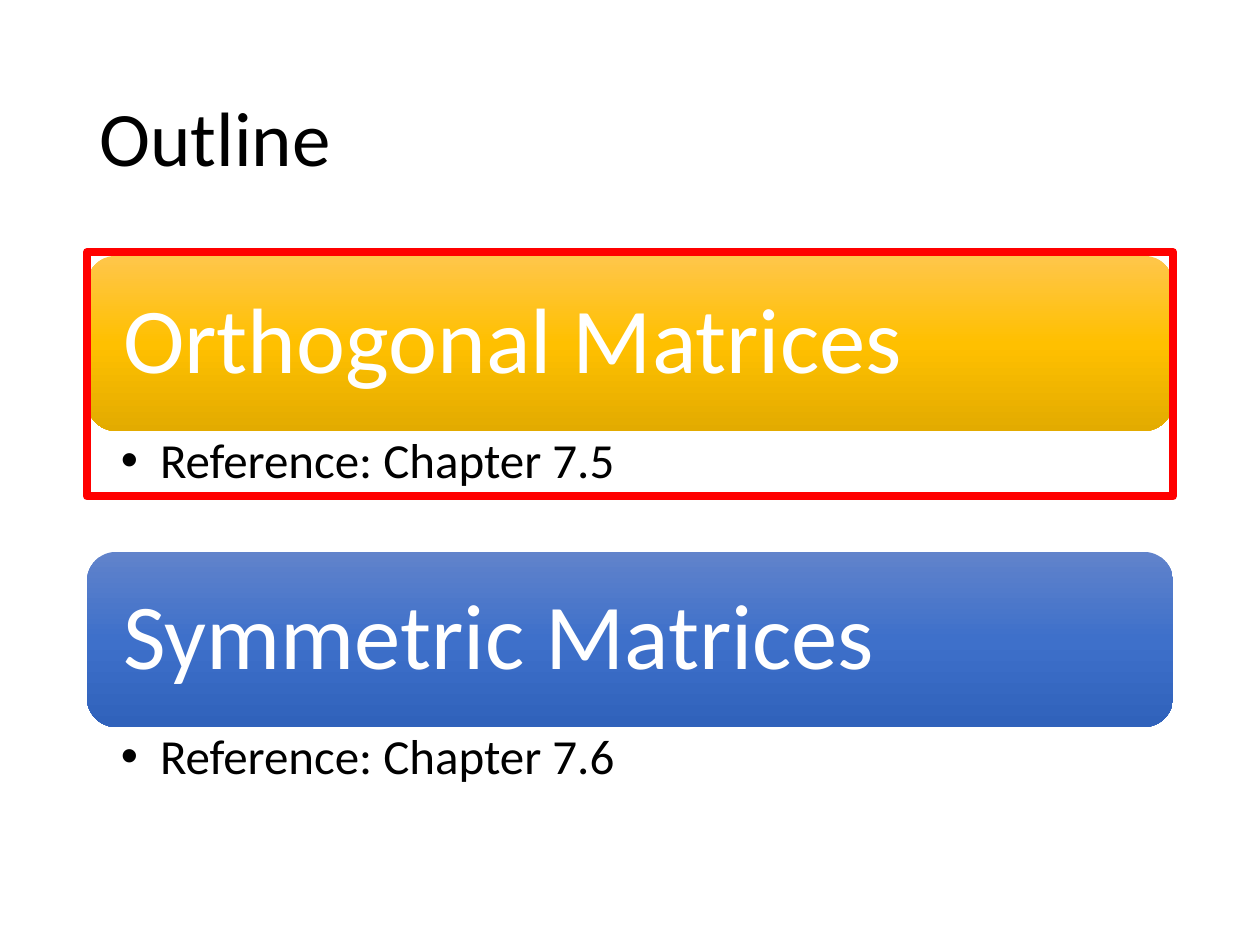
from copy import deepcopy

from lxml import etree
from pptx import Presentation
from pptx.dml.color import RGBColor
from pptx.enum.shapes import MSO_SHAPE
from pptx.enum.text import MSO_ANCHOR, PP_ALIGN
from pptx.oxml.ns import qn
from pptx.util import Inches, Pt

ROUND, RECT = MSO_SHAPE.ROUNDED_RECTANGLE, MSO_SHAPE.RECTANGLE
MIDDLE, TOP = MSO_ANCHOR.MIDDLE, MSO_ANCHOR.TOP
LEFT = PP_ALIGN.LEFT

EDGE, WIDTH = 0.69, 8.62
START, BAR, NOTE = 2.03, 1.39, 0.96
TOPICS = [
    ("Orthogonal Matrices", "Reference: Chapter 7.5", ("FFC64B", "FFC000", "E3AB00")),
    ("Symmetric Matrices", "Reference: Chapter 7.6", ("6183CB", "3E70CA", "3062BB")),
]


def color(code):
    return RGBColor.from_string(code)


def box(top, height):
    """Return the bounds of a full-width band."""
    return [Inches(n) for n in (EDGE, top, WIDTH, height)]


def write(frame, text, size, code, anchor, insets=(0.1, 0.05, 0.1, 0.05)):
    frame.word_wrap = True
    frame.vertical_anchor = anchor
    (frame.margin_left, frame.margin_top,
     frame.margin_right, frame.margin_bottom) = [Inches(n) for n in insets]
    line = frame.paragraphs[0]
    line.text = text
    line.alignment = LEFT
    line.line_spacing = 0.9
    line.font.size = Pt(size)
    line.font.name = "Calibri"
    line.font.color.rgb = color(code)
    return line


def shade(shape, codes):
    """Fill a shape with an even gradient from top to bottom."""
    fill = shape.fill
    fill.gradient()
    fill.gradient_angle = 270
    stops = shape._element.spPr.find(".//" + qn("a:gsLst"))
    while len(stops) < len(codes):
        stops.append(deepcopy(stops[-1]))
    for i, (stop, code) in enumerate(zip(fill.gradient_stops, codes)):
        stop.position = i / (len(codes) - 1)
        stop.color.rgb = color(code)


def bullet(line, indent):
    props = line._p.get_or_add_pPr()
    props.set("marL", str(Inches(indent)))
    props.set("indent", str(-Inches(indent)))
    etree.SubElement(props, qn("a:buFont")).set("typeface", "Arial")
    etree.SubElement(props, qn("a:buChar")).set("char", "•")


def add_bar(slide, top, text, codes):
    bar = slide.shapes.add_shape(ROUND, *box(top, BAR))
    bar.shadow.inherit = False
    bar.line.fill.background()
    shade(bar, codes)
    write(bar.text_frame, text, 53, "FFFFFF", MIDDLE, [0.22] * 4)


def add_note(slide, top, text):
    note = slide.shapes.add_textbox(*box(top, NOTE))
    line = write(note.text_frame, text, 28, "000000", TOP, (0.27, 0.04, 0.22, 0.04))
    bullet(line, 0.31)


def add_frame(slide, top, height):
    frame = slide.shapes.add_shape(RECT, *box(top, height))
    frame.shadow.inherit = False
    frame.fill.background()
    frame.line.color.rgb = color("FF0000")
    frame.line.width = Pt(4.5)


def main():
    deck = Presentation()
    deck.slide_width, deck.slide_height = Inches(10), Inches(7.5)
    slide = deck.slides.add_slide(deck.slide_layouts[5])

    title = slide.shapes.title
    title.left, title.top, title.width, title.height = box(0.4, 1.45)
    write(title.text_frame, "Outline", 44, "000000", MIDDLE)

    for i, (head, note, codes) in enumerate(TOPICS):
        top = START + i * (BAR + NOTE)
        add_bar(slide, top, head, codes)
        add_note(slide, top + BAR, note)
    add_frame(slide, 2, 1.94)

    deck.save("out.pptx")


if __name__ == "__main__":
    main()
